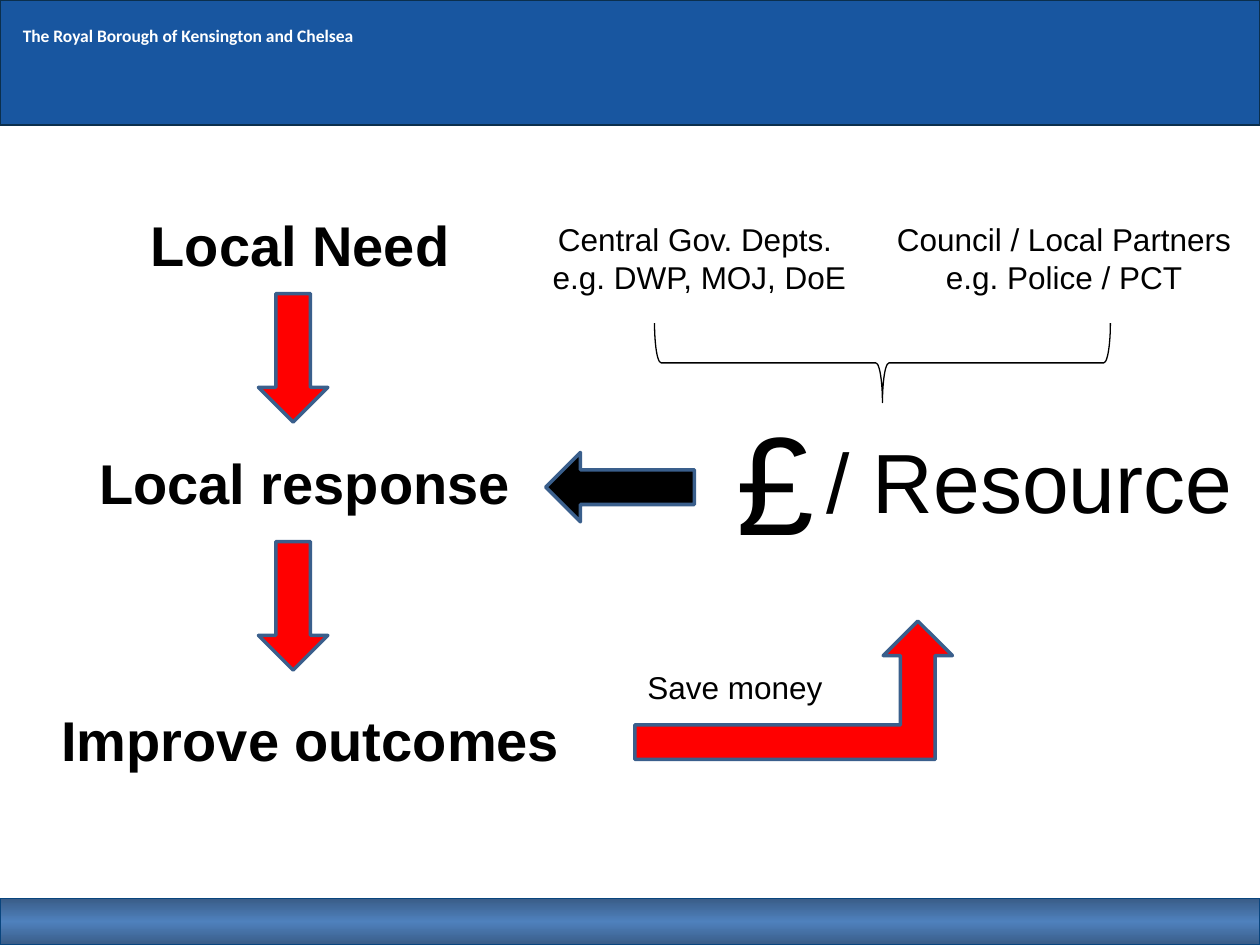
from lxml import etree
from pptx import Presentation
from pptx import util as u
from pptx.dml.color import RGBColor
from pptx.enum import shapes, text
from pptx.oxml.ns import qn

COLORS = {
    "banner": "1856A0", "banner_line": "0B2F4D",
    "footer_edge": "395C87", "footer_mid": "4F81BD", "footer_line": "09457E",
    "red": "FF0000", "black": "000000", "white": "FFFFFF", "arrow_line": "3A5F8C",
}
SHAPE = shapes.MSO_SHAPE
ALIGN = text.PP_ALIGN
HEADING = {"size": u.Pt(32), "bold": True}
NOTE = {"size": u.Pt(18)}


def rgb(name):
    return RGBColor.from_string(COLORS[name])


class FlowSlide:
    """Holds the text style and the current slide."""

    base = {"name": "Arial", "bold": False}

    def __init__(self, prs):
        self.s = prs.slides.add_slide(prs.slide_layouts[6])

    def shape(self, kind, box, fill, line, width=0.75, rotation=0):
        sp = self.s.shapes.add_shape(kind, *map(u.Cm, box))
        sp.shadow.inherit = False
        sp.rotation = rotation
        if fill:
            sp.fill.solid()
            sp.fill.fore_color.rgb = rgb(fill)
        else:
            sp.fill.background()
        sp.line.color.rgb = rgb(line)
        sp.line.width = u.Pt(width)
        return sp

    def arrow(self, kind, box, fill="red", rotation=0):
        return self.shape(kind, box, fill, "arrow_line", 2, rotation)

    def gradient(self, sp, stops):
        sp.fill.gradient()
        sp.fill.gradient_angle = 270
        gs_lst = sp._element.spPr.find(qn("a:gradFill")).find(qn("a:gsLst"))
        for gs in list(gs_lst):
            gs_lst.remove(gs)
        for pos, name in stops:
            gs = etree.SubElement(gs_lst, qn("a:gs"), pos=str(pos * 1000))
            etree.SubElement(gs, qn("a:srgbClr"), val=COLORS[name])

    def add_lines(self, tf, lines, style, color="black", align=ALIGN.LEFT):
        for i, line in enumerate(lines):
            p = tf.paragraphs[0] if i == 0 else tf.add_paragraph()
            p.alignment = align
            r = p.add_run()
            r.text = line
            for key, value in {**self.base, **style}.items():
                setattr(r.font, key, value)
            r.font.color.rgb = rgb(color)

    def label(self, box, lines, style, align=ALIGN.LEFT, wrap=False):
        tf = self.s.shapes.add_textbox(*map(u.Cm, box)).text_frame
        tf.word_wrap = wrap
        tf.auto_size = text.MSO_AUTO_SIZE.SHAPE_TO_FIT_TEXT
        self.add_lines(tf, lines, style, align=align)


def main():
    prs = Presentation()
    prs.slide_width, prs.slide_height = u.Cm(25.4), u.Cm(19.05)
    flow = FlowSlide(prs)

    # Banner and footer bars
    banner = flow.shape(SHAPE.RECTANGLE, (0, 0, 25.4, 2.52), "banner", "banner_line")
    tf = banner.text_frame
    layout = {"margin_left": u.Cm(0.46), "margin_top": u.Cm(0.51),
              "vertical_anchor": text.MSO_ANCHOR.TOP, "word_wrap": True}
    for key, value in layout.items():
        setattr(tf, key, value)
    flow.add_lines(tf, ["The Royal Borough of Kensington and Chelsea"],
                   {"name": "Calibri", "size": u.Pt(10), "bold": True}, "white")
    footer = flow.shape(SHAPE.RECTANGLE, (0, 18.11, 25.4, 0.94), "footer_mid", "footer_line")
    flow.gradient(footer, [(0, "footer_edge"), (50, "footer_mid"), (100, "footer_edge")])

    # Left column: need, response, outcomes
    for words, left, top, width in [("Local Need", 2.79, 4.11, 6.58),
                                    ("Local response", 1.75, 8.92, 8.86),
                                    ("Improve outcomes", 0.99, 14.1, 10.64)]:
        flow.label((left, top, width, 1.63), [words], HEADING)
    for top in (5.92, 10.92):
        flow.arrow(SHAPE.DOWN_ARROW, (5.21, top, 1.4, 2.59))

    # Resource feeding the response
    flow.arrow(SHAPE.RIGHT_ARROW, (11, 9.12, 3, 1.4), "black", 180)
    flow.label((14.6, 7.85, 2.11, 3.68), ["£"], {"size": u.Pt(80)})
    flow.label((16.41, 8.53, 8.79, 2.31), ["/ Resource"], {"size": u.Pt(48)})

    # Funding sources joined by a brace
    flow.shape(SHAPE.LEFT_BRACE, (16.99, 2.72, 1.6, 9.19), None, "black", rotation=270)
    flow.label((10.8, 4.32, 6.6, 1.8), ["Central Gov. Depts. ", "e.g. DWP, MOJ, DoE"],
               NOTE, ALIGN.CENTER, True)
    flow.label((17.5, 4.32, 7.9, 1.8), ["Council / Local Partners e.g. Police / PCT"],
               NOTE, ALIGN.CENTER, True)

    # Savings returning to the resource
    flow.arrow(SHAPE.BENT_UP_ARROW, (12.8, 12.52, 6.4, 2.79))
    flow.label((12.8, 13.34, 5.26, 1.3), ["Save money"], NOTE)

    prs.save("out.pptx")


if __name__ == "__main__":
    main()
